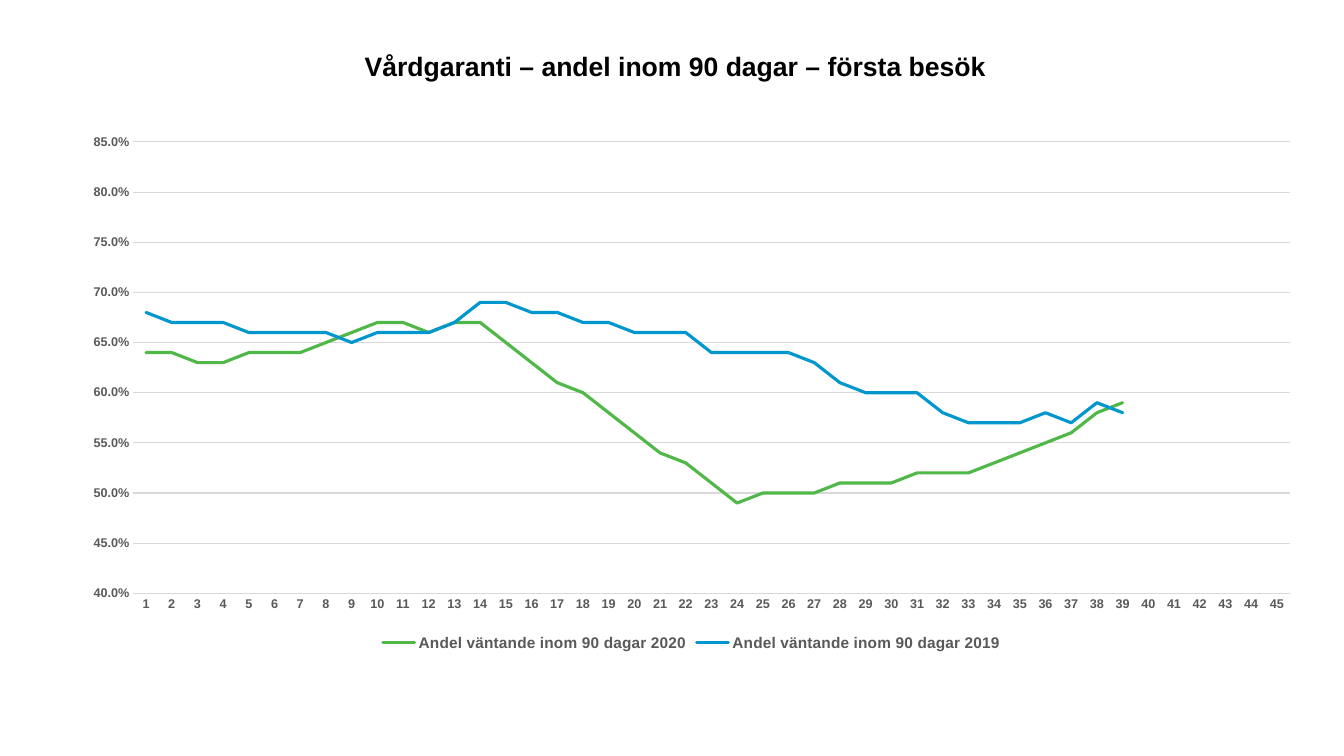
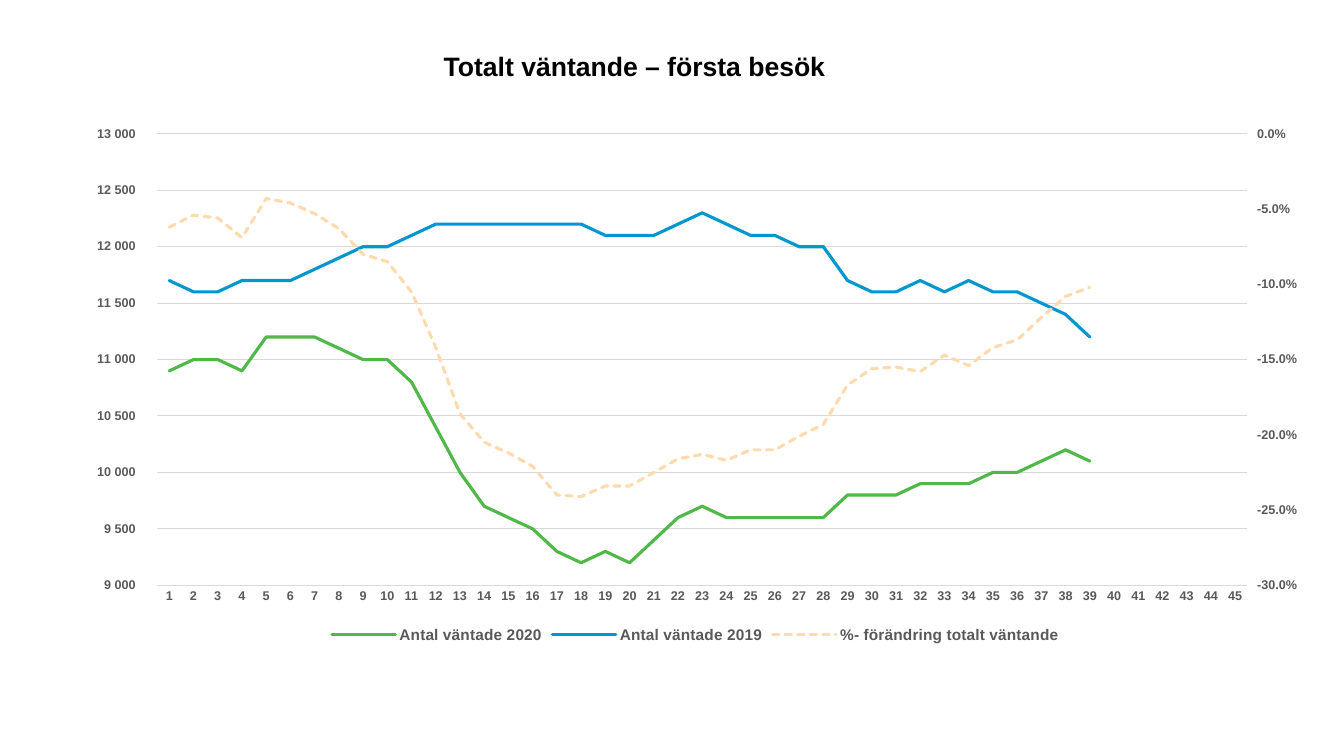
from copy import deepcopy

from pptx import Presentation
from pptx.chart.axis import CategoryAxis, ValueAxis
from pptx.chart.data import CategoryChartData
from pptx.dml.color import RGBColor
from pptx.enum.chart import XL_CHART_TYPE, XL_LEGEND_POSITION as LEGEND, XL_TICK_MARK as TICK
from pptx.enum.dml import MSO_LINE_DASH_STYLE as DASH
from pptx.enum.text import MSO_ANCHOR, MSO_AUTO_SIZE, PP_ALIGN
from pptx.oxml.ns import qn
from pptx.util import Pt

FONT = "Arial"
BLACK = RGBColor(0x00, 0x00, 0x00)
GREY = RGBColor(0x59, 0x59, 0x59)
LIGHT_GREY = RGBColor(0xD9, 0xD9, 0xD9)
GREEN = RGBColor(0x50, 0xB8, 0x48)
BLUE = RGBColor(0x00, 0x97, 0xCF)
PEACH = RGBColor(0xFD, 0xDB, 0xAE)
SERIES_COLOURS = [GREEN, BLUE, PEACH]
WEEKS = 45
PERCENT = "0.0%"

share_2020 = [
    0.64, 0.64, 0.63, 0.63, 0.64, 0.64, 0.64, 0.65, 0.66, 0.67, 0.67, 0.66, 0.67,
    0.67, 0.65, 0.63, 0.61, 0.6, 0.58, 0.56, 0.54, 0.53, 0.51, 0.49, 0.5, 0.5,
    0.5, 0.51, 0.51, 0.51, 0.52, 0.52, 0.52, 0.53, 0.54, 0.55, 0.56, 0.58, 0.59]
share_2019 = [
    0.68, 0.67, 0.67, 0.67, 0.66, 0.66, 0.66, 0.66, 0.65, 0.66, 0.66, 0.66, 0.67,
    0.69, 0.69, 0.68, 0.68, 0.67, 0.67, 0.66, 0.66, 0.66, 0.64, 0.64, 0.64, 0.64,
    0.63, 0.61, 0.6, 0.6, 0.6, 0.58, 0.57, 0.57, 0.57, 0.58, 0.57, 0.59, 0.58]
waiting_2020 = [
    10900, 11000, 11000, 10900, 11200, 11200, 11200, 11100, 11000, 11000, 10800, 10400, 10000,
    9700, 9600, 9500, 9300, 9200, 9300, 9200, 9400, 9600, 9700, 9600, 9600, 9600,
    9600, 9600, 9800, 9800, 9800, 9900, 9900, 9900, 10000, 10000, 10100, 10200, 10100]
waiting_2019 = [
    11700, 11600, 11600, 11700, 11700, 11700, 11800, 11900, 12000, 12000, 12100, 12200, 12200,
    12200, 12200, 12200, 12200, 12200, 12100, 12100, 12100, 12200, 12300, 12200, 12100, 12100,
    12000, 12000, 11700, 11600, 11600, 11700, 11600, 11700, 11600, 11600, 11500, 11400, 11200]
change = [
    -0.062, -0.054, -0.056, -0.069, -0.043, -0.046, -0.053, -0.063, -0.08, -0.085, -0.105,
    -0.142, -0.186, -0.205, -0.212, -0.221, -0.24, -0.241, -0.234, -0.234, -0.225, -0.216,
    -0.213, -0.217, -0.21, -0.21, -0.201, -0.193, -0.167, -0.156, -0.155, -0.158, -0.147,
    -0.154, -0.142, -0.137, -0.122, -0.108, -0.102]

# Boxes are left, top, width, height in points; scales are minimum, maximum, step.
SLIDES = [
    dict(title="Vårdgaranti – andel inom 90 dagar – första besök", title_left=253.25,
         box=(49, 88.5, 890, 380), scale=(0.4, 0.85, 0.05), number_format=PERCENT,
         series={"Andel väntande inom 90 dagar 2020": share_2020,
                 "Andel väntande inom 90 dagar 2019": share_2019}),
    dict(title="Totalt väntande – första besök", title_left=309.75,
         box=(49, 82.75, 895.5, 380), scale=(9000, 13000, 500),
         number_format=r"_-* #\ ##0\ _k_r_-",
         series={"Antal väntade 2020": waiting_2020,
                 "Antal väntade 2019": waiting_2019,
                 "%- förändring totalt väntande": change}),
]


def format_font(font, size, colour, bold=True):
    font.name = FONT
    font.size = Pt(size)
    font.bold = bold
    font.color.rgb = colour


def move_last_series_to_right_axis(chart):
    """Put the last line in a second line plot with its own percentage axis."""
    line_plot = chart.plots[0]._element
    right_plot = deepcopy(line_plot)
    line_plot.remove(line_plot.findall(qn("c:ser"))[-1])
    for series_element in right_plot.findall(qn("c:ser"))[:-1]:
        right_plot.remove(series_element)
    line_plot.addnext(right_plot)

    left_axis = chart.value_axis._element
    right_axis = deepcopy(left_axis)
    hidden_axis = deepcopy(chart.category_axis._element)
    left_axis.addnext(right_axis)
    right_axis.addnext(hidden_axis)
    ids = {hidden_axis: "5001", right_axis: "5002"}
    for axis_element, crossed in ((hidden_axis, right_axis), (right_axis, hidden_axis)):
        axis_element.find(qn("c:axId")).set("val", ids[axis_element])
        axis_element.find(qn("c:crossAx")).set("val", ids[crossed])
    for reference, axis_id in zip(right_plot.findall(qn("c:axId")), ids.values()):
        reference.set("val", axis_id)
    right_axis.find(qn("c:axPos")).set("val", "r")
    right_axis.find(qn("c:crosses")).set("val", "max")

    CategoryAxis(hidden_axis).visible = False
    axis = ValueAxis(right_axis)
    axis.minimum_scale, axis.maximum_scale, axis.major_unit = -0.3, 0, 0.05
    axis.has_major_gridlines = False
    axis.major_tick_mark = TICK.OUTSIDE
    axis.tick_labels.number_format = PERCENT


presentation = Presentation()
presentation.slide_width = Pt(960)
presentation.slide_height = Pt(540)

for content in SLIDES:
    slide = presentation.slides.add_slide(presentation.slide_layouts[5])

    title = slide.shapes.title
    title.left, title.top = Pt(content["title_left"]), Pt(32)
    title.width, title.height = Pt(493), Pt(30)
    frame = title.text_frame
    frame.text = content["title"]
    frame.word_wrap = True
    frame.auto_size = MSO_AUTO_SIZE.SHAPE_TO_FIT_TEXT
    frame.vertical_anchor = MSO_ANCHOR.TOP
    frame.paragraphs[0].alignment = PP_ALIGN.LEFT
    format_font(frame.paragraphs[0].runs[0].font, 19, BLACK)

    data = CategoryChartData(number_format=content["number_format"])
    data.categories = [str(week) for week in range(1, WEEKS + 1)]
    for name, values in content["series"].items():
        data.add_series(name, values + [None] * (WEEKS - len(values)))
    box = [Pt(length) for length in content["box"]]
    chart = slide.shapes.add_chart(XL_CHART_TYPE.LINE, *box, data).chart
    format_font(chart.font, 10, BLACK, bold=False)
    chart.has_title = False
    chart.has_legend = True
    chart.legend.position = LEGEND.BOTTOM
    chart.legend.include_in_layout = False
    format_font(chart.legend.font, 11, GREY)

    for axis in (chart.category_axis, chart.value_axis):
        axis.major_tick_mark = axis.minor_tick_mark = TICK.NONE
        format_font(axis.tick_labels.font, 9, GREY)
    value_axis = chart.value_axis
    value_axis.minimum_scale, value_axis.maximum_scale, value_axis.major_unit = content["scale"]
    value_axis.tick_labels.number_format = content["number_format"]
    value_axis.tick_labels.number_format_is_linked = False
    value_axis.format.line.fill.background()
    for line in (chart.category_axis.format.line, value_axis.major_gridlines.format.line):
        line.color.rgb = LIGHT_GREY
        line.width = Pt(0.75)

    chart.plots[0].vary_by_categories = False
    for series, colour in zip(chart.plots[0].series, SERIES_COLOURS):
        series.smooth = False
        series.format.line.color.rgb = colour
        series.format.line.width = Pt(2.25)
        series.format.line._get_or_add_ln().set("cap", "rnd")
        if colour == PEACH:
            series.format.line.dash_style = DASH.SQUARE_DOT

    if len(content["series"]) == 3:
        move_last_series_to_right_axis(chart)

presentation.save("out.pptx")
